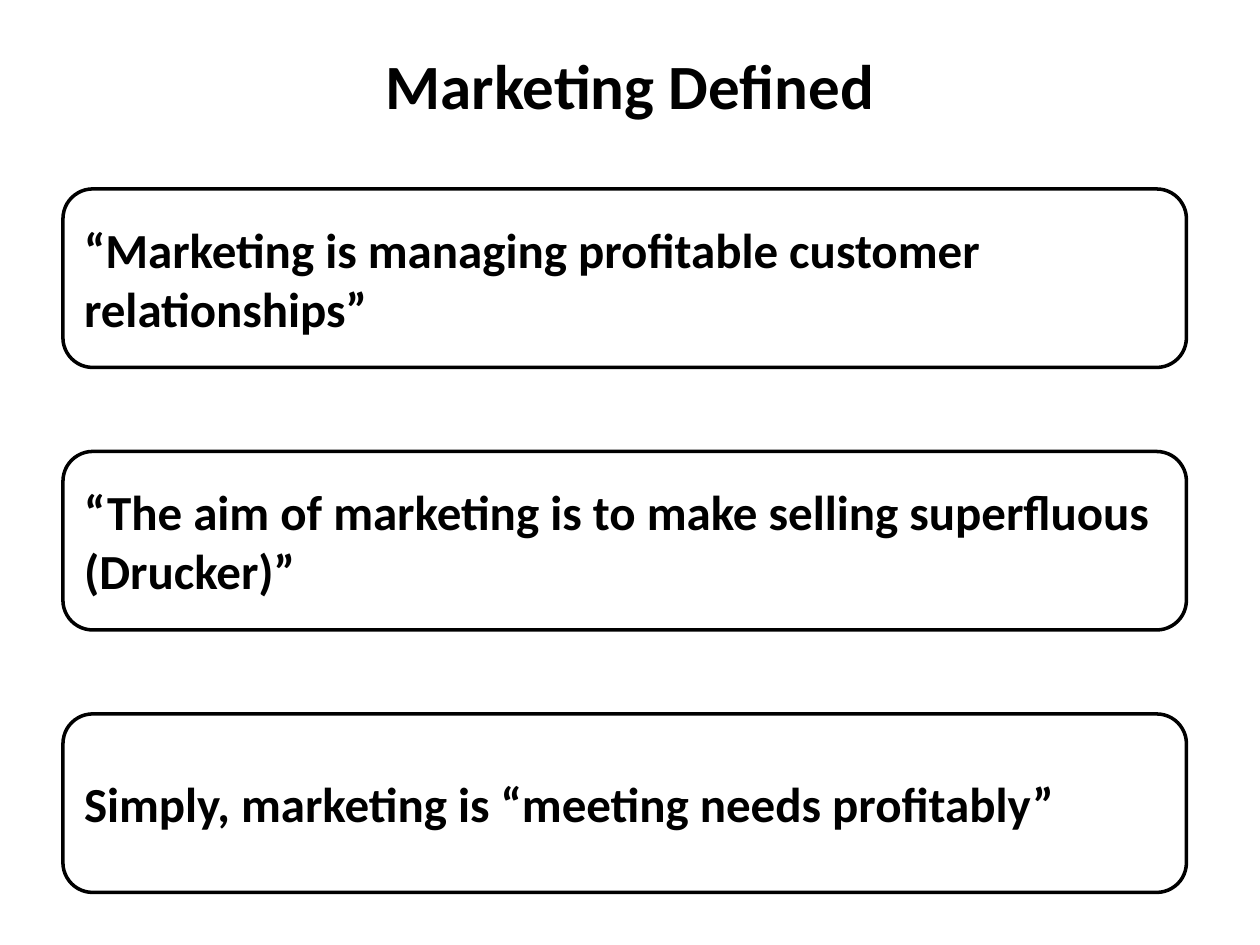
from dataclasses import dataclass

from pptx import Presentation
from pptx import util as u
from pptx.dml.color import RGBColor
from pptx.enum import shapes, text

BLACK = "000000"
WHITE = "FFFFFF"
LEFT = 36


@dataclass
class Definition:
    wording: str
    top: float


def colour(value: str) -> RGBColor:
    return RGBColor.from_string(value)


def write(shape, wording: str, size: float, align: text.PP_ALIGN) -> None:
    frame = shape.text_frame
    frame.text = wording
    frame.word_wrap = True
    frame.auto_size = text.MSO_AUTO_SIZE.NONE
    frame.vertical_anchor = text.MSO_ANCHOR.MIDDLE
    para = frame.paragraphs[0]
    para.alignment = align
    for span in para.runs:
        span.font.name = "Calibri"
        span.font.size = u.Pt(size)
        span.font.bold = True
        span.font.color.rgb = colour(BLACK)


def draw_title(page, wording: str) -> None:
    title = page.shapes.title
    title.left, title.top = u.Pt(LEFT), u.Pt(18)
    title.width, title.height = u.Pt(648), u.Pt(60)
    write(title, wording, 36, text.PP_ALIGN.CENTER)


def draw_definition(page, definition: Definition) -> None:
    box = page.shapes.add_shape(
        shapes.MSO_SHAPE.ROUNDED_RECTANGLE,
        u.Pt(LEFT), u.Pt(definition.top), u.Pt(642), u.Pt(102),
    )
    box.shadow.inherit = False
    box.fill.solid()
    box.fill.fore_color.rgb = colour(WHITE)
    box.line.color.rgb = colour(BLACK)
    box.line.width = u.Pt(2)
    write(box, definition.wording, 28, text.PP_ALIGN.LEFT)


def main() -> None:
    deck = Presentation()
    deck.slide_width, deck.slide_height = u.Pt(720), u.Pt(540)
    page = deck.slides.add_slide(deck.slide_layouts[5])
    draw_title(page, "Marketing Defined")
    wordings = (
        "“Marketing is managing profitable customer relationships”",
        "“The aim of marketing is to make selling superfluous (Drucker)”",
        "Simply, marketing is “meeting needs profitably”",
    )
    for row, wording in enumerate(wordings):
        draw_definition(page, Definition(wording, 108 + 150 * row))
    deck.save("out.pptx")


if __name__ == "__main__":
    main()
